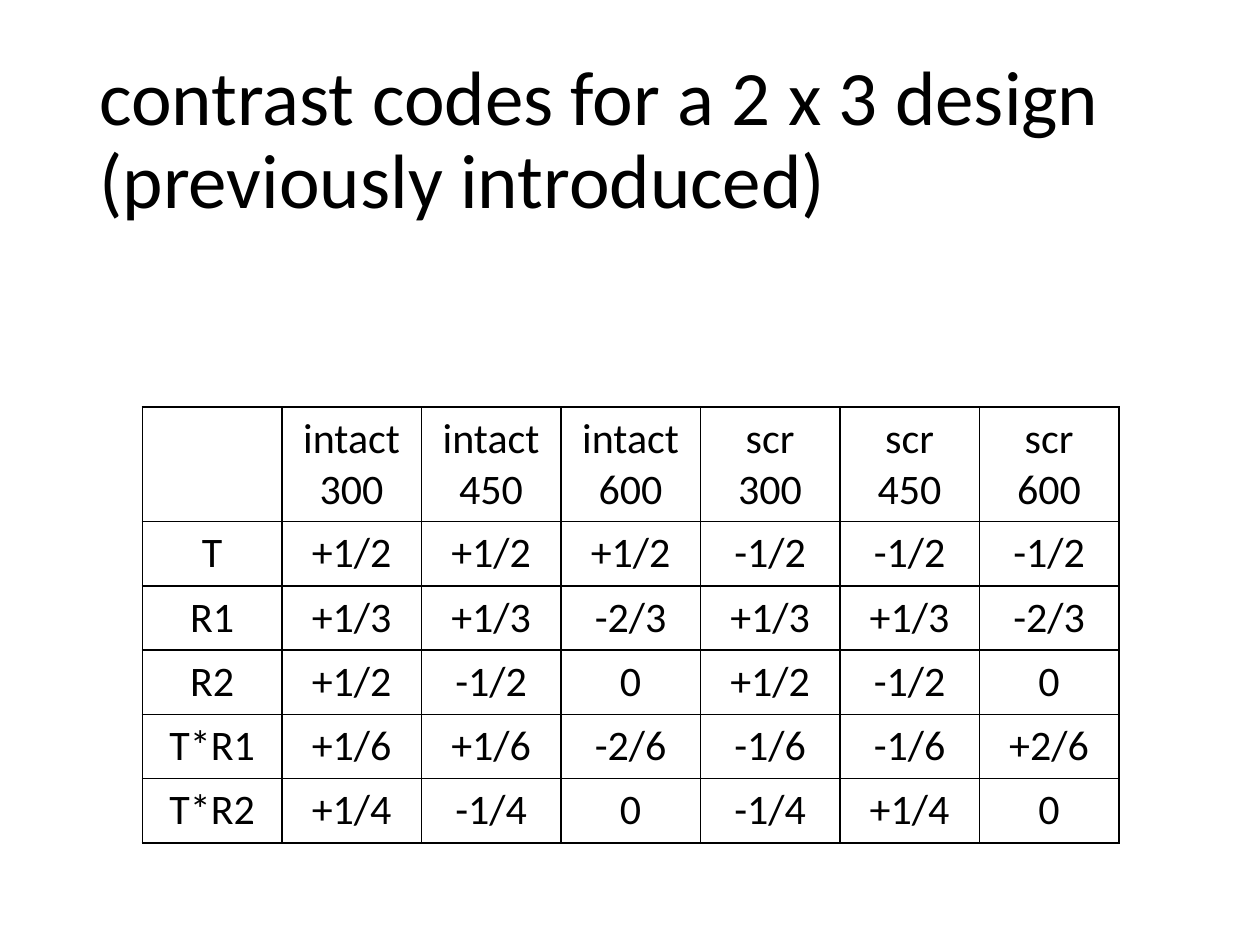
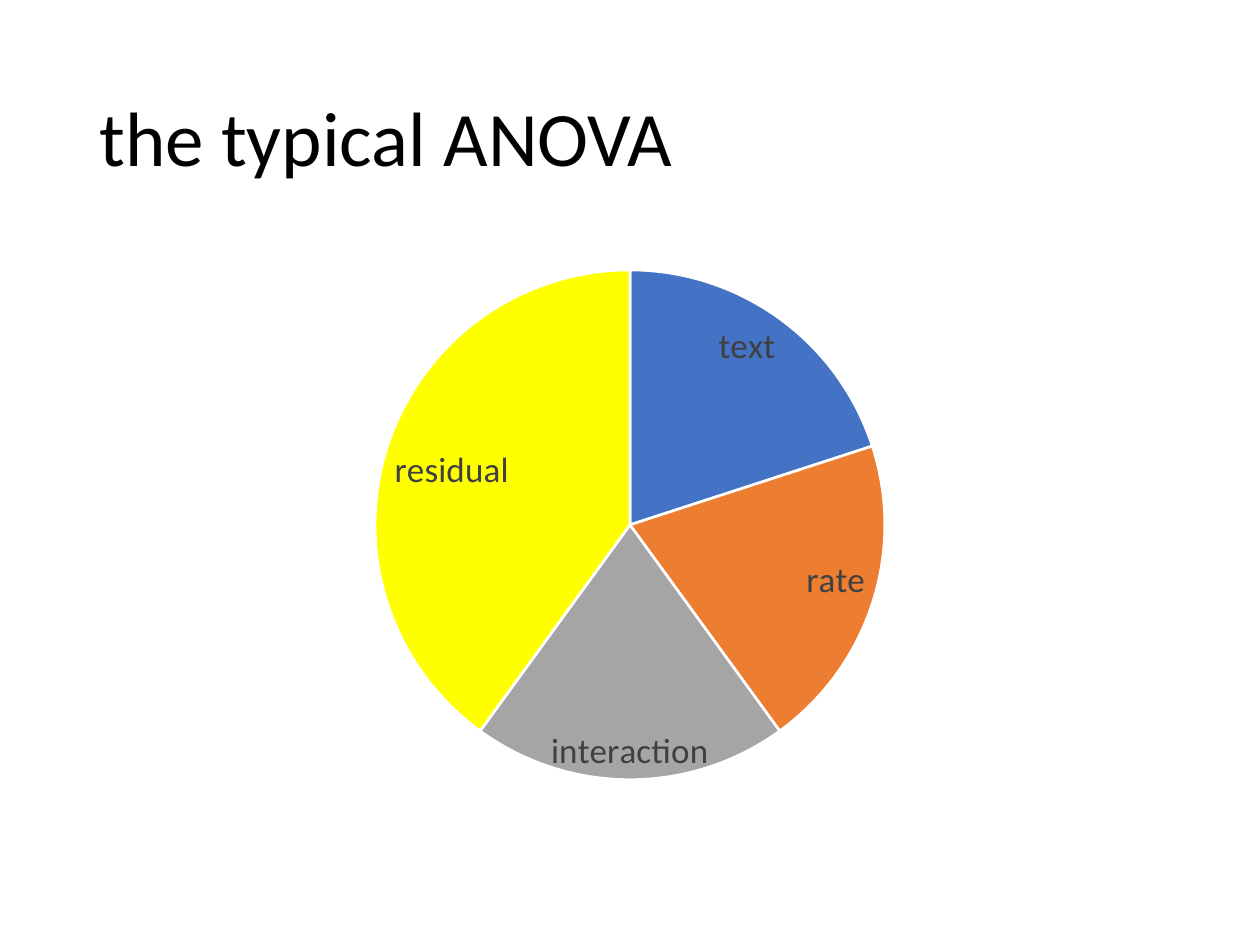
"""Build two slides on contrast codes and the typical ANOVA."""
from lxml.etree import SubElement
from pptx import Presentation
from pptx.chart.data import CategoryChartData
from pptx.dml.color import RGBColor
from pptx.enum.chart import XL_CHART_TYPE as ChartType, XL_LABEL_POSITION as LabelPosition
from pptx.enum.text import MSO_ANCHOR as Anchor, PP_ALIGN as Align
from pptx.oxml import parse_xml
from pptx.oxml.ns import nsdecls, qn
from pptx.util import Inches, Pt

FONT = "Calibri"
BLACK, WHITE, LABEL_GRAY = "000000", "FFFFFF", "404040"
MARGIN, CONTENT_WIDTH = 0.69, 8.62


def style_font(font, size, color):
    """Apply the shared typeface with a size and a hex colour."""
    font.name = FONT
    font.size = Pt(size)
    font.color.rgb = RGBColor.from_string(color)


def add_titled_slide(presentation, title):
    """Add a blank white slide with a title."""
    slide = presentation.slides.add_slide(presentation.slide_layouts[6])
    slide.background.fill.solid()
    slide.background.fill.fore_color.rgb = RGBColor.from_string(WHITE)
    shape = slide.shapes.add_textbox(
        Inches(MARGIN), Inches(0.4), Inches(CONTENT_WIDTH), Inches(1.45))
    shape.text_frame.word_wrap = True
    shape.text_frame.vertical_anchor = Anchor.MIDDLE
    paragraph = shape.text_frame.paragraphs[0]
    paragraph.text = title
    paragraph.line_spacing = 0.9
    for run in paragraph.runs:
        style_font(run.font, 44, BLACK)
    return slide


presentation = Presentation()
presentation.slide_width, presentation.slide_height = Inches(10), Inches(7.5)

codes_slide = add_titled_slide(
    presentation, "contrast codes for a 2 x 3 design \v(previously introduced)")
conditions = [f"{text}\n{rate}" for text in ("intact", "scr") for rate in (300, 450, 600)]
code_rows = [
    ["", *conditions],
    ["T", "+1/2", "+1/2", "+1/2", "-1/2", "-1/2", "-1/2"],
    ["R1", "+1/3", "+1/3", "-2/3", "+1/3", "+1/3", "-2/3"],
    ["R2", "+1/2", "-1/2", "0", "+1/2", "-1/2", "0"],
    ["T*R1", "+1/6", "+1/6", "-2/6", "-1/6", "-1/6", "+2/6"],
    ["T*R2", "+1/4", "-1/4", "0", "-1/4", "+1/4", "0"],
]
header_height, row_height, table_width = 0.91, 0.51, 7.75
table_height = header_height + row_height * (len(code_rows) - 1)
table = codes_slide.shapes.add_table(
    len(code_rows), len(code_rows[0]), Inches(1.13), Inches(3.23),
    Inches(table_width), Inches(table_height)).table
table.first_row = table.horz_banding = False
for row_index, codes in enumerate(code_rows):
    table.rows[row_index].height = Inches(row_height if row_index else header_height)
    for column_index, code in enumerate(codes):
        cell = table.cell(row_index, column_index)
        cell.text_frame.text = code
        for paragraph in cell.text_frame.paragraphs:
            paragraph.alignment = Align.CENTER
            for run in paragraph.runs:
                style_font(run.font, 24, BLACK)
        properties = cell._tc.get_or_add_tcPr()
        for side in ("a:lnL", "a:lnR", "a:lnT", "a:lnB"):
            border = SubElement(properties, qn(side), w=str(Pt(1)))
            border_fill = SubElement(border, qn("a:solidFill"))
            SubElement(border_fill, qn("a:srgbClr"), val=BLACK)
        cell.fill.background()

anova_slide = add_titled_slide(presentation, "the typical ANOVA")
slice_colors = ["4472C4", "ED7D31", "A5A5A5", "FFFF00"]
chart_data = CategoryChartData()
chart_data.categories = ["text", "rate", "interaction", "residual"]
chart_data.add_series("Series 1", (20, 20, 20, 40))
chart = anova_slide.shapes.add_chart(
    ChartType.PIE, Inches(MARGIN), Inches(2), Inches(CONTENT_WIDTH), Inches(4.76),
    chart_data).chart
chart.has_title = chart.has_legend = False
style_font(chart.font, 10, BLACK)
pie = chart.plots[0]
pie.vary_by_categories = True
for slice_index, color in enumerate(slice_colors):
    slice_format = pie.series[0].points[slice_index].format
    slice_format.fill.solid()
    slice_format.fill.fore_color.rgb = RGBColor.from_string(color)
    slice_format.line.color.rgb = RGBColor.from_string(WHITE)
    slice_format.line.width = Pt(1.5)
pie.has_data_labels = True
labels = pie.data_labels
labels.show_category_name = True
labels.show_value = labels.show_percentage = False
labels.position = LabelPosition.INSIDE_END
style_font(labels.font, 20, LABEL_GRAY)

plot_area = chart._chartSpace.chart.plotArea
for layout in plot_area.findall(qn("c:layout")):
    plot_area.remove(layout)
plot_area.insert(0, parse_xml(
    f'<c:layout {nsdecls("c")}><c:manualLayout><c:layoutTarget val="inner"/>'
    '<c:xMode val="edge"/><c:yMode val="edge"/><c:x val="0.26"/><c:y val="0.03"/>'
    '<c:w val="0.48"/><c:h val="0.85"/></c:manualLayout></c:layout>'))

presentation.save("out.pptx")
